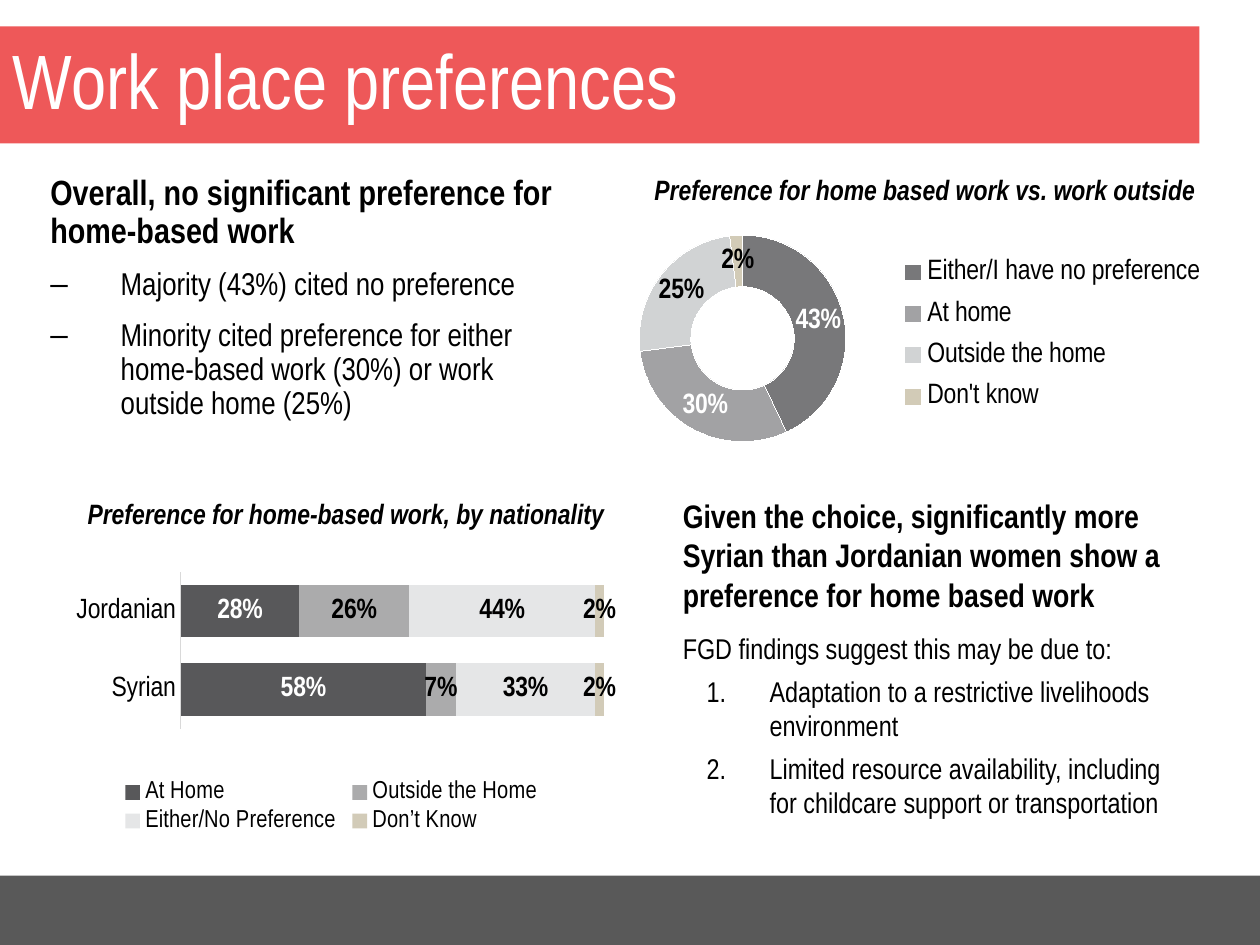
from lxml import etree
from pptx import Presentation, util as u
from pptx.chart import data
from pptx.dml.color import RGBColor
from pptx.enum import chart as ch, shapes, text
from pptx.oxml import ns

FONT = "Arial Narrow"
INK = {
    "black": "000000", "white": "FFFFFF", "red": "EE5859", "foot": "595959",
    "axis": "D9D9D9", "dark": "58585A", "mid": "ABABAC", "light": "E5E6E7",
    "sand": "D2CBB8", "ring1": "78787A", "ring2": "A2A2A4", "ring3": "D1D3D4",
    "ring4": "D2CBB7",
}


def rgb(name):
    return RGBColor.from_string(INK[name])


def style(font, size, ink="black", bold=False, slant=False):
    font.name, font.size = FONT, u.Pt(size)
    font.bold, font.italic = bold, slant
    font.color.rgb = rgb(ink)


def paint(item, ink):
    item.fill.solid()
    item.fill.fore_color.rgb = rgb(ink)


def place(shape, box):
    shape.left, shape.top, shape.width, shape.height = map(u.Cm, box)


def write(frame, words, size, first=False, mark=None, value=None, left=0, hang=0,
          level=0, before=0, lines=1, align=text.PP_ALIGN.LEFT, **look):
    para = frame.paragraphs[0] if first else frame.add_paragraph()
    para.level, para.alignment = level, align
    props = para._p.get_or_add_pPr()
    props.set("marL", str(u.Cm(left)))
    props.set("indent", str(-u.Cm(hang)))
    sign = etree.SubElement(props, ns.qn("a:" + (mark or "buNone")))
    if mark:
        sign.set("char" if mark == "buChar" else "type", value)
    para.space_before, para.line_spacing = u.Pt(before), lines
    run = para.add_run()
    run.text = words
    style(run.font, size, **look)


def layout(part, x, y, w, h, inner=False):
    old = part.find(ns.qn("c:layout"))
    if old is not None:
        part.remove(old)
    node = etree.Element(ns.qn("c:layout"))
    man = etree.SubElement(node, ns.qn("c:manualLayout"))
    pairs = [("layoutTarget", "inner")] if inner else []
    pairs += [("xMode", "edge"), ("yMode", "edge"), ("x", x), ("y", y), ("w", w), ("h", h)]
    for tag, val in pairs:
        etree.SubElement(man, ns.qn("c:" + tag)).set("val", str(val))
    pos = part.find(ns.qn("c:legendPos"))
    part.insert(0 if pos is None else 1, node)


def banner(shape, box):
    place(shape, box)
    paint(shape, "red")
    frame = shape.text_frame
    frame.auto_size = text.MSO_AUTO_SIZE.NONE
    frame.vertical_anchor = text.MSO_ANCHOR.MIDDLE
    write(frame, "Work place preferences", 44, first=True, lines=0.9, ink="white")


def footer(slide, box):
    bar = slide.shapes.add_shape(shapes.MSO_SHAPE.RECTANGLE, *map(u.Cm, box))
    bar.shadow.inherit = False
    paint(bar, "foot")
    bar.line.fill.background()


def body(shape, box):
    place(shape, box)
    frame = shape.text_frame
    frame.auto_size = text.MSO_AUTO_SIZE.NONE
    frame.vertical_anchor = text.MSO_ANCHOR.TOP
    return frame


def summary(shape, box):
    frame = body(shape, box)
    write(frame, "Overall, no significant preference for home-based work", 20,
          first=True, lines=0.9, bold=True)
    for words in ("Majority (43%) cited no preference",
                  "Minority cited preference for either home-based work (30%) "
                  "or work outside home (25%)"):
        write(frame, words, 18, mark="buChar", value="–", left=1.42, hang=1.42,
              before=10, lines=0.9)


def reasons(shape, box):
    frame = body(shape, box)
    write(frame, "Given the choice, significantly more Syrian than Jordanian women "
          "show a preference for home based work", 18.6, first=True, bold=True)
    write(frame, "FGD findings suggest this may be due to:", 16.3, before=10)
    for words in ("Adaptation to a restrictive livelihoods environment",
                  "Limited resource availability, including for childcare support "
                  "or transportation"):
        write(frame, words, 16.3, mark="buAutoNum", value="arabicPeriod", level=1,
              left=1.75, hang=1.27, before=5)


def caption(slide, words, box):
    shape = slide.shapes.add_textbox(*map(u.Cm, box))
    frame = shape.text_frame
    frame.word_wrap = True
    frame.auto_size = text.MSO_AUTO_SIZE.SHAPE_TO_FIT_TEXT
    write(frame, words, 16, first=True, align=text.PP_ALIGN.CENTER, bold=True, slant=True)


def graph(slide, kind, box, cats, rows, side, size):
    source = data.CategoryChartData(number_format="0%")
    source.categories = cats
    for name, vals in rows:
        source.add_series(name, vals)
    chart = slide.shapes.add_chart(kind, *map(u.Cm, box), source).chart
    chart.has_title = False
    style(chart.font, 10)
    chart.has_legend = True
    chart.legend.position = side
    chart.legend.include_in_layout = False
    style(chart.legend.font, size)
    return chart


def label(series, ink, form):
    tags = series.data_labels
    tags.show_value = True
    tags.number_format, tags.number_format_is_linked = form, False
    style(tags.font, 16, ink=ink, bold=True)


def ring(slide, box):
    x, y, w, h = box
    caption(slide, "Preference for home based work vs. work outside", (x, y + 0.81, w, 0.94))
    cats = ["Either/I have no preference", "At home", "Outside the home", "Don't know"]
    chart = graph(slide, ch.XL_CHART_TYPE.DOUGHNUT, box, cats,
                  [("Series 1", (0.43, 0.3, 0.25, 0.02))], ch.XL_LEGEND_POSITION.RIGHT, 16)
    plot = chart.plots[0]
    plot.vary_by_categories = True
    plot._element.find(ns.qn("c:holeSize")).set("val", "40")
    layout(chart._chartSpace.chart.plotArea, 0.03, 0.17, 0.34, 0.78, inner=True)
    layout(chart.legend._element, 0.43, 0.31, 0.56, 0.48)
    series = plot.series[0]
    label(series, "white", "###0%")
    for i in range(len(cats)):
        point = series.points[i]
        paint(point.format, f"ring{i + 1}")
        point.format.line.color.rgb = rgb("white")
        if i > 1:
            style(point.data_label.font, 16, bold=True)


def bars(slide, box):
    x, y, w, h = box
    caption(slide, "Preference for home-based work, by nationality", (x, y, w, 0.94))
    rows = [("At Home", (0.58, 0.28), "dark"), ("Outside the Home", (0.07, 0.26), "mid"),
            ("Either/No Preference", (0.33, 0.44), "light"),
            ("Don’t Know", (0.02, 0.02), "sand")]
    chart = graph(slide, ch.XL_CHART_TYPE.BAR_STACKED_100, (x, y + 1.63, w - 0.59, h - 1.63),
                  ["Syrian", "Jordanian"], [row[:2] for row in rows],
                  ch.XL_LEGEND_POSITION.BOTTOM, 14)
    layout(chart._chartSpace.chart.plotArea, 0.24, 0, 0.73, 0.59, inner=True)
    plot = chart.plots[0]
    plot.gap_width, plot.overlap = 50, 100
    plot.vary_by_categories = False
    axis = chart.category_axis
    axis.major_tick_mark = ch.XL_TICK_MARK.NONE
    axis.format.line.color.rgb = rgb("axis")
    axis.format.line.width = u.Pt(0.75)
    style(axis.tick_labels.font, 16)
    chart.value_axis.has_major_gridlines = False
    chart.value_axis.visible = False
    for series, (_, _, ink) in zip(plot.series, rows):
        paint(series.format, ink)
        label(series, "white" if ink == "dark" else "black", "0%")


def main():
    deck = Presentation()
    deck.slide_width, deck.slide_height = u.Cm(25.4), u.Cm(19.05)
    slide = deck.slides.add_slide(deck.slide_layouts[3])
    title, left, right = slide.placeholders
    footer(slide, (0, 17.65, 25.4, 1.4))
    banner(title, (0, 0.53, 24.18, 2.36))
    summary(left, (0.76, 3.4, 10.97, 6.5))
    reasons(right, (13.51, 9.88, 10.49, 7.44))
    bars(slide, (0.84, 9.88, 12.27, 7.01))
    ring(slide, (12.52, 2.54, 12.25, 7.65))
    deck.save("out.pptx")


if __name__ == "__main__":
    main()
